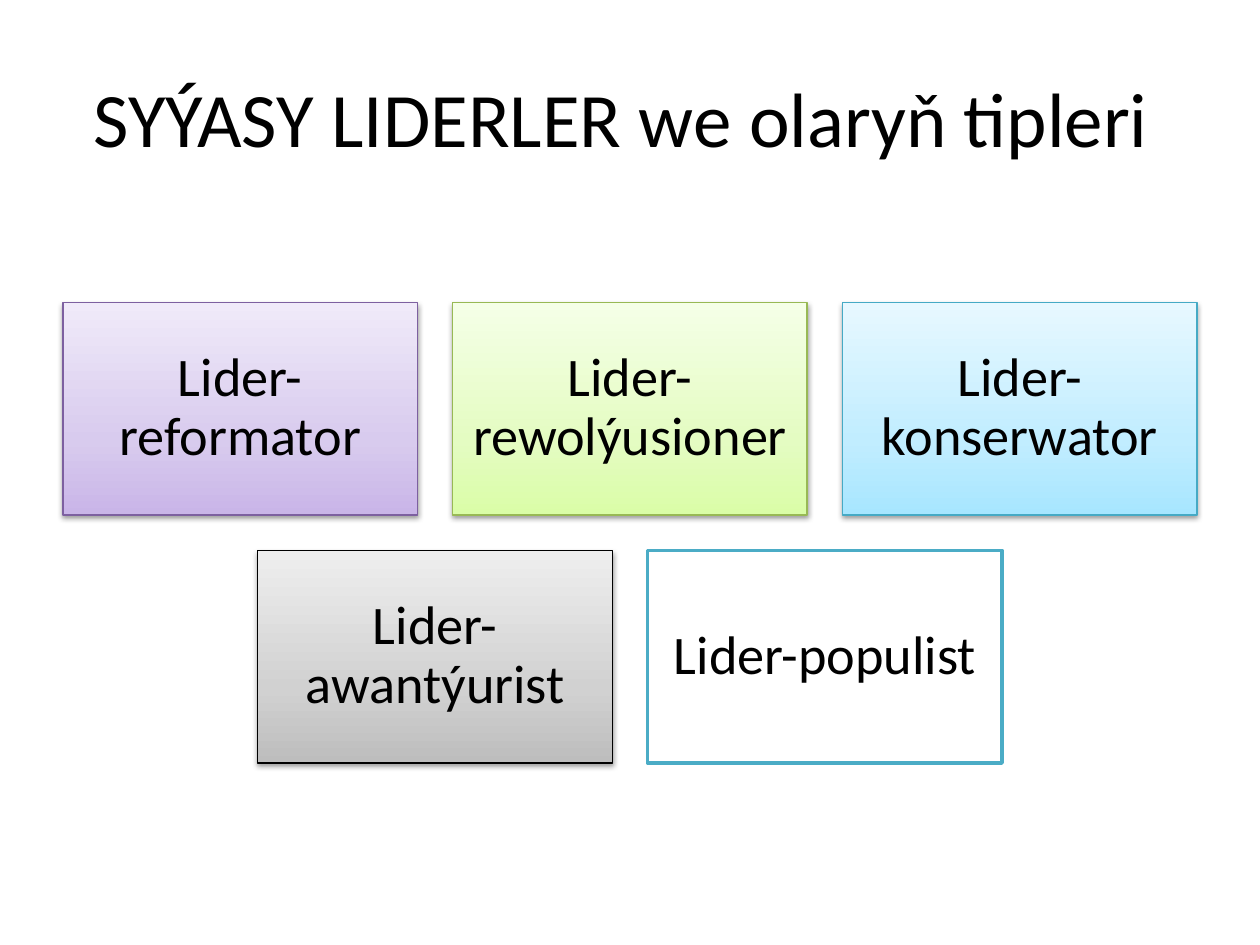
from copy import deepcopy

from lxml.etree import SubElement
from pptx import Presentation
from pptx.dml.color import RGBColor
from pptx.enum.shapes import MSO_SHAPE
from pptx.enum.text import MSO_ANCHOR, PP_ALIGN
from pptx.oxml.ns import qn
from pptx.util import Inches, Pt

COLORS = {
    "text": "000000",
    "white": "FFFFFF",
    "shadow": "000000",
    "purple": ("7D60A0", "C9B5E8", "D8CBEE", "F0EAF9"),
    "green": ("98B955", "DAFDA7", "E4FCC2", "F5FFE7"),
    "blue": ("46AAC5", "A7E6FF", "C1EDFF", "E7F8FF"),
    "gray": ("000000", "BDBDBD", "D1D1D1", "EEEEEE"),
    "outline": ("4BACC6",),
}

ROWS = [
    [("Lider-reformator", "purple"), ("Lider-rewolýusioner", "green"),
     ("Lider-konserwator", "blue")],
    [("Lider-awantýurist", "gray"), ("Lider-populist", "outline")],
]


class LeaderSlide:
    """Style and page for a title above centred rows of leader cards."""

    font = "Calibri"
    columns = 3
    left, top, span = 0.5, 2.4, 9
    gap = 0.28
    card_width = (span - gap * (columns - 1)) / columns
    card_height = card_width * 0.6

    def __init__(self, deck):
        self.page = deck.slides.add_slide(deck.slide_layouts[5])

    def set_text(self, frame, text, size):
        frame.text = text
        frame.word_wrap = True
        frame.vertical_anchor = MSO_ANCHOR.MIDDLE
        para = frame.paragraphs[0]
        para.alignment = PP_ALIGN.CENTER
        para.font.name = self.font
        para.font.size = Pt(size)
        para.font.color.rgb = RGBColor.from_string(COLORS["text"])
        return para

    def title(self, text):
        box = self.page.shapes.title
        box.left, box.top = Inches(self.left), Inches(0.3)
        box.width, box.height = Inches(self.span), Inches(1.25)
        self.set_text(box.text_frame, text, 44)

    def gradient(self, box, colors):
        box.fill.gradient()
        box.fill.gradient_angle = 90
        stop_list = box._element.spPr.find(qn("a:gradFill")).find(qn("a:gsLst"))
        stop_list.append(deepcopy(stop_list[-1]))
        for stop, position, color in zip(box.fill.gradient_stops, (0, 0.35, 1), colors):
            stop.position = position
            stop.color.rgb = RGBColor.from_string(color)

    def shadow(self, box):
        effects = box._element.spPr.find(qn("a:effectLst"))
        shade = SubElement(effects, qn("a:outerShdw"), blurRad=str(Pt(3.1)),
                           dist=str(Pt(1.6)), dir="5400000", rotWithShape="0")
        color = SubElement(shade, qn("a:srgbClr"), val=COLORS["shadow"])
        SubElement(color, qn("a:alpha"), val="38000")

    def card(self, column, row, text, scheme):
        line, *stops = COLORS[scheme]
        box = self.page.shapes.add_shape(
            MSO_SHAPE.RECTANGLE,
            Inches(self.left + column * (self.card_width + self.gap)),
            Inches(self.top + row * (self.card_height + self.gap)),
            Inches(self.card_width), Inches(self.card_height))
        box.shadow.inherit = False
        box.line.color.rgb = RGBColor.from_string(line)
        box.line.width = Pt(0.75 if stops else 2)
        if stops:
            self.gradient(box, stops)
            self.shadow(box)
        else:
            box.fill.solid()
            box.fill.fore_color.rgb = RGBColor.from_string(COLORS["white"])
        frame = box.text_frame
        frame.margin_left = frame.margin_right = Inches(0.13)
        frame.margin_top = frame.margin_bottom = Inches(0.13)
        self.set_text(frame, text, 31).line_spacing = 0.9

    def cards(self, rows):
        for row, leaders in enumerate(rows):
            first = (self.columns - len(leaders)) / 2
            for index, (text, scheme) in enumerate(leaders):
                self.card(first + index, row, text, scheme)


def main():
    deck = Presentation()
    deck.slide_width, deck.slide_height = Inches(10), Inches(7.5)
    slide = LeaderSlide(deck)
    slide.title("SYÝASY LIDERLER we olaryň tipleri ")
    slide.cards(ROWS)
    deck.save("out.pptx")


if __name__ == "__main__":
    main()
